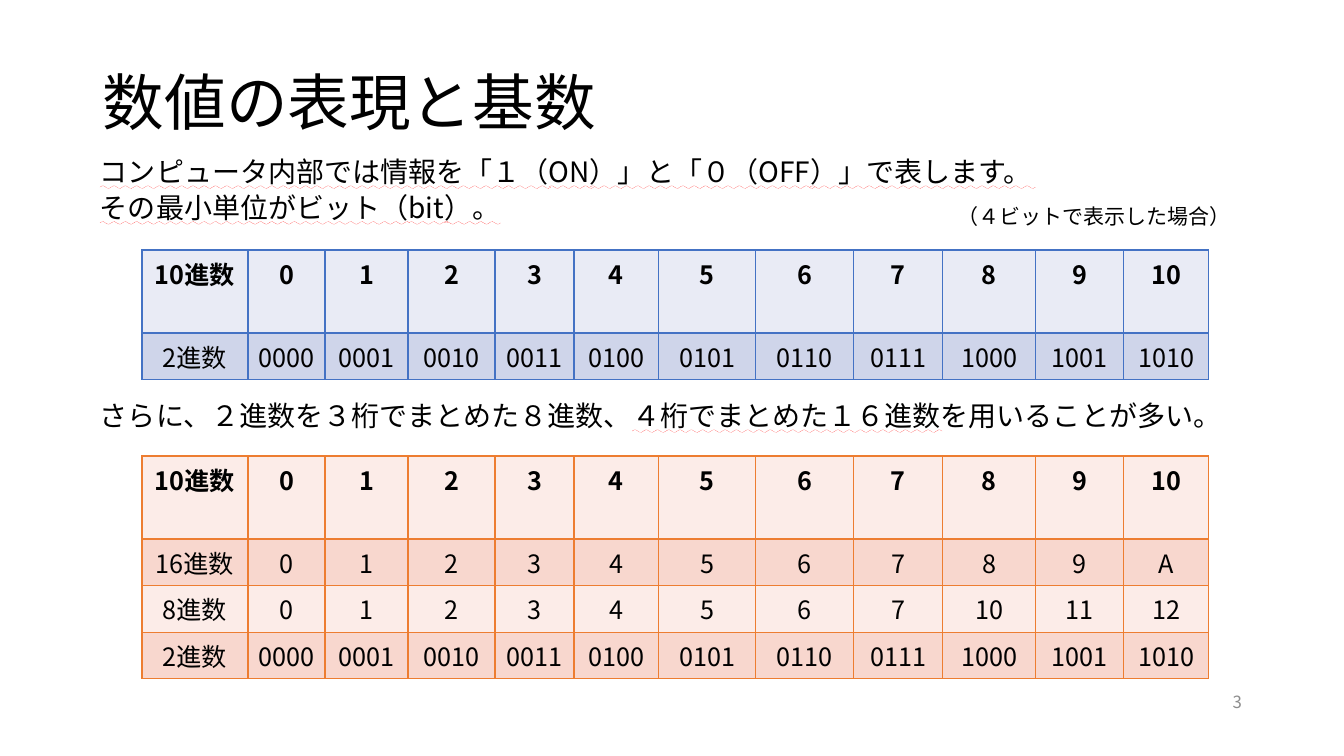
from dataclasses import dataclass
from typing import Any

import lxml.etree
import pptx
import pptx.dml.color
import pptx.enum.text
import pptx.oxml
import pptx.oxml.ns
import pptx.util

SCALE = 12192000 / 1344  # EMU per px
FONT = "Noto Sans CJK JP"
COLORS = {
    "text": "000000", "number": "8C8C8C", "wave": "FF0000",
    "blue_line": "4472C4", "blue_light": "E9EBF5", "blue_dark": "CFD5EA",
    "orange_line": "ED7D31", "orange_light": "FCECE8", "orange_dark": "F8D7CE",
}
ALIGN = pptx.enum.text.PP_ALIGN
ANCHOR = pptx.enum.text.MSO_ANCHOR


@dataclass(frozen=True)
class Run:
    text: str
    wavy: bool = False


@dataclass(frozen=True)
class TextBlock:
    box: tuple[int, int, int, int]
    paragraphs: list[list[Run]]
    size: int
    color: str = "text"
    align: Any = ALIGN.LEFT
    anchor: Any = ANCHOR.TOP
    line_spacing: float = 0.9
    space_before: int = 0


@dataclass(frozen=True)
class NumberTable:
    top: int
    palette: str
    rows: list[list[str]]


def px(length: int) -> pptx.util.Emu:
    return pptx.util.Emu(round(length * SCALE))


def set_attributes(target: Any, values: dict[str, Any]) -> None:
    for name, value in values.items():
        setattr(target, name, value)


def color_fill(tag: str, color: str) -> str:
    """XML of a solid fill inside the given element."""
    return (f'<{tag} {pptx.oxml.ns.nsdecls("a")}><a:solidFill>'
            f'<a:srgbClr val="{COLORS[color]}"/></a:solidFill></{tag}>')


def format_run(run: Any, size: int, color: str, bold: bool = False, wavy: bool = False) -> None:
    set_attributes(run.font, {"name": FONT, "size": pptx.util.Pt(size), "bold": bold})
    run.font.color.rgb = pptx.dml.color.RGBColor.from_string(COLORS[color])
    latin = run.font._element.find(pptx.oxml.ns.qn("a:latin"))
    east_asian = lxml.etree.Element(pptx.oxml.ns.qn("a:ea"), typeface=FONT)
    latin.addnext(east_asian)
    if wavy:
        run.font.underline = pptx.enum.text.MSO_UNDERLINE.WAVY_LINE
        latin.addprevious(pptx.oxml.parse_xml(color_fill("a:uFill", "wave")))


def fill_text(shape: Any, block: TextBlock, margin: int = 0) -> None:
    frame = shape.text_frame
    set_attributes(frame, {
        "word_wrap": True, "auto_size": pptx.enum.text.MSO_AUTO_SIZE.NONE,
        "vertical_anchor": block.anchor,
        "margin_left": px(margin), "margin_right": px(margin),
        "margin_top": 0, "margin_bottom": 0,
    })
    for index, runs in enumerate(block.paragraphs):
        paragraph = frame.add_paragraph() if index else frame.paragraphs[0]
        set_attributes(paragraph, {
            "alignment": block.align, "line_spacing": block.line_spacing,
            "space_before": pptx.util.Pt(block.space_before if index else 0),
        })
        for item in runs:
            run = paragraph.add_run()
            run.text = item.text
            format_run(run, block.size, block.color, wavy=item.wavy)


def add_text(slide: Any, block: TextBlock) -> None:
    fill_text(slide.shapes.add_textbox(*map(px, block.box)), block)


def format_cell(cell: Any, text: str, fill: str, line: str, bold: bool) -> None:
    cell.fill.solid()
    cell.fill.fore_color.rgb = pptx.dml.color.RGBColor.from_string(COLORS[fill])
    properties = cell._tc.get_or_add_tcPr()
    for index, side in enumerate(("lnL", "lnR", "lnT", "lnB")):
        border = pptx.oxml.parse_xml(color_fill(f"a:{side}", line))
        border.set("w", str(pptx.util.Pt(1)))
        properties.insert(index, border)
    paragraph = cell.text_frame.paragraphs[0]
    paragraph.alignment = ALIGN.CENTER
    run = paragraph.add_run()
    run.text = text
    format_run(run, 18, "text", bold)


def add_number_table(slide: Any, spec_table: NumberTable) -> None:
    rows = spec_table.rows
    frame = slide.shapes.add_table(
        len(rows), len(COLUMN_WIDTHS), px(TABLE_LEFT), px(spec_table.top),
        px(sum(COLUMN_WIDTHS)), px(ROW_HEIGHT * len(rows)))
    table = frame.table
    set_attributes(table, {"first_row": False, "horz_banding": False})
    for column, width in zip(table.columns, COLUMN_WIDTHS):
        column.width = px(width)
    for row_index, values in enumerate(rows):
        table.rows[row_index].height = px(ROW_HEIGHT)
        shade = "dark" if row_index % 2 else "light"
        for column_index, value in enumerate(values):
            format_cell(table.cell(row_index, column_index), value,
                        f"{spec_table.palette}_{shade}", f"{spec_table.palette}_line",
                        row_index == 0)


def number_row(base: int, pattern: str) -> list[str]:
    return [f"{base}進数"] + [format(number, pattern) for number in range(11)]


# Table geometry and rows
TABLE_LEFT = 142
ROW_HEIGHT = 41
COLUMN_WIDTHS = [106, 77, 83, 87, 79, 85, 97, 98, 89, 93, 88, 85]
DECIMAL = number_row(10, "d")
BINARY = number_row(2, "04b")
TABLES = [
    NumberTable(250, "blue", [DECIMAL, BINARY]),
    NumberTable(456, "orange", [DECIMAL, number_row(16, "X"), number_row(8, "o"), BINARY]),
]

# Texts
TITLE = TextBlock((93, 33, 1159, 146), [[Run("数値の表現と基数")]], 44, anchor=ANCHOR.MIDDLE)
TEXTS = [
    TextBlock((100, 158, 1130, 84), [
        [Run("コンピュータ内部では情報を「１（ON）」と「０（OFF）」で表します。", True)],
        [Run("その最小単位がビット（bit）。", True)],
    ], 20, space_before=4),
    TextBlock((958, 204, 290, 32), [[Run("（４ビットで表示した場合）")]], 15, line_spacing=1.0),
    TextBlock((100, 402, 1150, 40), [[
        Run("さらに、２進数を３桁でまとめた８進数、"),
        Run("４桁でまとめた１６進数", True),
        Run("を用いることが多い。"),
    ]], 20),
    TextBlock((950, 682, 292, 40), [[Run("3")]], 12, "number", ALIGN.RIGHT, ANCHOR.MIDDLE, 1.0),
]


def main() -> None:
    presentation = pptx.Presentation()
    set_attributes(presentation, {"slide_width": px(1344), "slide_height": px(756)})
    slide = presentation.slides.add_slide(presentation.slide_layouts[5])

    # Title
    title = slide.shapes.title
    set_attributes(title, dict(zip(("left", "top", "width", "height"), map(px, TITLE.box))))
    fill_text(title, TITLE, margin=10)

    # Explanations and tables
    for block in TEXTS:
        add_text(slide, block)
    for number_table in TABLES:
        add_number_table(slide, number_table)

    presentation.save("out.pptx")


if __name__ == "__main__":
    main()
